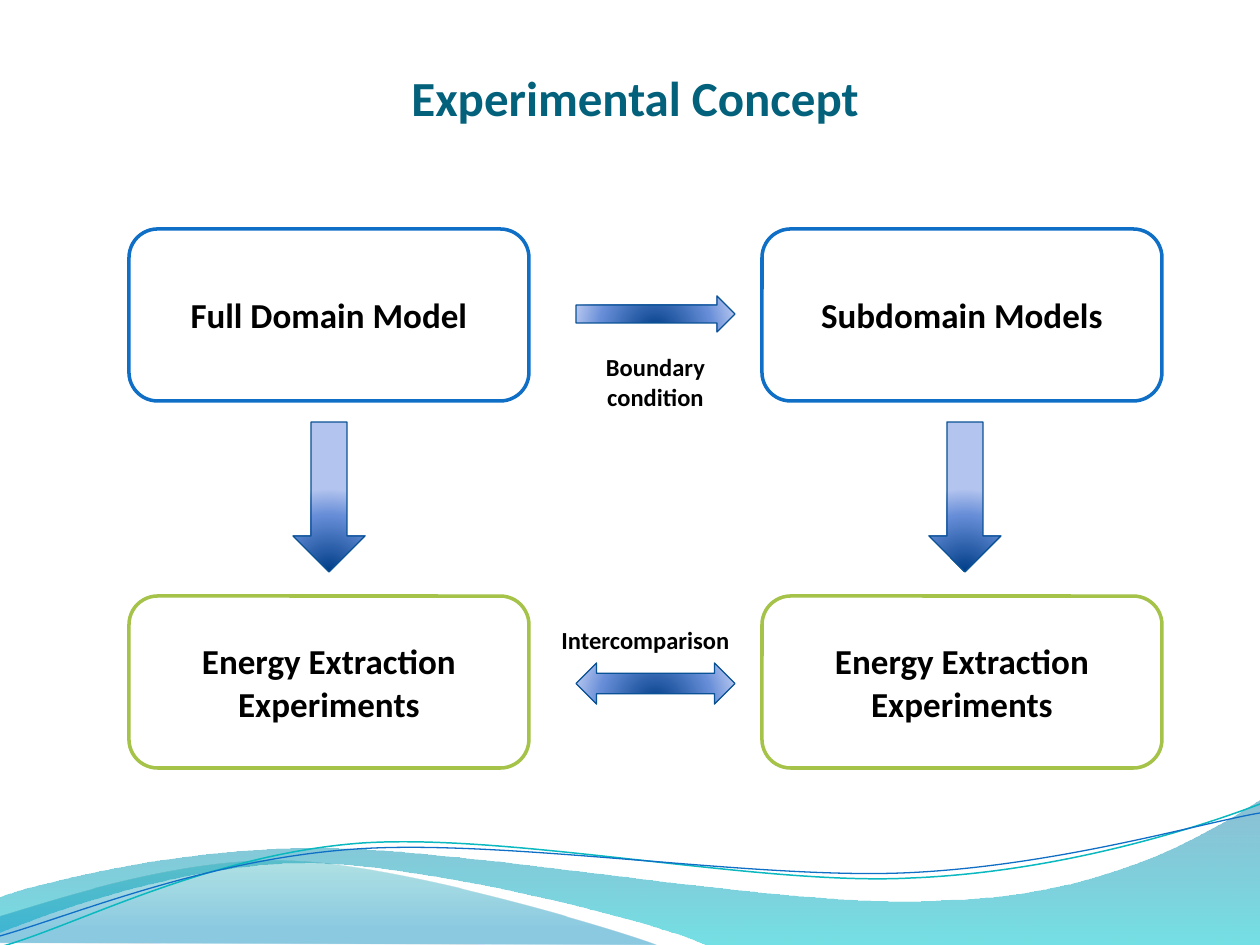
from lxml.etree import SubElement
from pptx import Presentation
from pptx.dml.color import RGBColor
from pptx.enum.shapes import MSO_SHAPE
from pptx.enum.text import MSO_ANCHOR, PP_ALIGN
from pptx.oxml.ns import qn
from pptx.util import Pt

SCALE = 914400 / 126
COLORS = {
    "title": "04617B", "ink": "000000", "paper": "FFFFFF",
    "blue": "0F6FC6", "green": "A5C249", "teal": "0AB8BF", "edge": "095295",
    "navy": "003D87", "mid": "668DD7", "pale": "B3C4EF",
    "deep": "0074A1", "aqua": "00C6CF", "sea": "00A1A9", "sky": "008BBF",
}
GLOW = [(0, "navy", 100), (68, "mid", 100), (100, "pale", 100)]
BANDS = [
    ([(1260, 144), (706, 144), (660, 122, 423, 63, 305, 63),
      (185, 63, 53, 111, 0, 132), (-1, 97), (21, 88, 164, 48, 320, 48),
      (476, 48, 779, 107, 936, 100), (1097, 98, 1202, 38, 1261, 0)],
     [(0, "deep", 45), (100, "aqua", 55)]),
    ([(656, 144), (617, 129, 401, 64, 291, 61),
      (181, 56, 48, 102, 0, 116), (0, 142)],
     [(0, "sea", 30), (80, "sky", 45)]),
]
CURVES = [
    ([(1260, 4), (1200, 27, 1061, 72, 911, 78),
      (761, 86, 513, 33, 362, 43), (210, 54, 77, 125, 3, 146)], "teal", 0.85),
    ([(1260, 13), (1201, 23, 1053, 67, 903, 73),
      (752, 79, 506, 39, 357, 49), (207, 59, 74, 115, 0, 136)], "blue", 0.75),
]


def px(*vals):
    """Turn pixel lengths into EMU."""
    return [round(v * SCALE) for v in vals]


def rgb(name):
    """Look up a colour by name."""
    return RGBColor.from_string(COLORS[name])


def put(shape, text, size=20, color="ink", anchor=MSO_ANCHOR.MIDDLE):
    """Set centred bold text in a shape."""
    frame = shape.text_frame
    frame.word_wrap = True
    frame.vertical_anchor = anchor
    para = frame.paragraphs[0]
    para.alignment = PP_ALIGN.CENTER
    run = para.add_run()
    run.text = text
    font = run.font
    font.name, font.size, font.bold = "Calibri", Pt(size), True
    font.color.rgb = rgb(color)


def label(slide, box, text, **fmt):
    """Add a text box."""
    put(slide.shapes.add_textbox(*px(*box)), text, **fmt)


def blend(shape, stops, radial=False):
    """Fill a shape with a linear or radial gradient."""
    shape.fill.gradient()
    grad = shape.element.spPr.find(qn("a:gradFill"))
    for child in list(grad):
        grad.remove(child)
    group = SubElement(grad, qn("a:gsLst"))
    for pos, name, alpha in stops:
        stop = SubElement(group, qn("a:gs"), pos=str(pos * 1000))
        color = SubElement(stop, qn("a:srgbClr"), val=COLORS[name])
        if alpha < 100:
            SubElement(color, qn("a:alpha"), val=str(alpha * 1000))
    if radial:
        ring = SubElement(grad, qn("a:path"), path="circle")
        SubElement(ring, qn("a:fillToRect"), l="50000", t="130000",
                   r="50000", b="-30000")
    else:
        SubElement(grad, qn("a:lin"), ang="5400000", scaled="0")


def stroke(shape, color, width):
    """Outline a shape and drop its shadow."""
    shape.shadow.inherit = False
    shape.line.color.rgb = rgb(color)
    shape.line.width = Pt(width)


def card(slide, box, text, color):
    """Add a rounded box with a coloured outline."""
    shape = slide.shapes.add_shape(MSO_SHAPE.ROUNDED_RECTANGLE, *px(*box))
    shape.fill.solid()
    shape.fill.fore_color.rgb = rgb("paper")
    stroke(shape, color, 2)
    put(shape, text)


def arrow(slide, kind, box):
    """Add a shaded block arrow."""
    shape = slide.shapes.add_shape(kind, *px(*box))
    blend(shape, GLOW, radial=True)
    stroke(shape, "edge", 0.75)


def sweep(slide, route, left, top, close):
    """Add a freeform of lines and cubic curves."""
    spots = [px(left + seg[i], top + seg[i + 1])
             for seg in route for i in range(0, len(seg), 2)]
    pen = slide.shapes.build_freeform(*spots[0])
    pen.add_line_segments(spots[1:], close=close)
    shape = pen.convert_to_shape()
    shape.shadow.inherit = False
    legs = iter(list(shape.element.iter(qn("a:lnTo"))))
    for seg in route[1:]:
        first = next(legs)
        if len(seg) == 6:
            bend = first.getparent()
            curve = SubElement(bend, qn("a:cubicBezTo"))
            bend.replace(first, curve)
            for leg in (first, next(legs), next(legs)):
                curve.append(leg[0])
                if leg is not first:
                    bend.remove(leg)
    return shape


def waves(slide, left, top):
    """Draw the bands and curves along the foot."""
    for route, stops in BANDS:
        shape = sweep(slide, route, left, top, True)
        blend(shape, stops)
        shape.line.fill.background()
    for route, color, width in CURVES:
        shape = sweep(slide, route, left, top, False)
        shape.fill.background()
        stroke(shape, color, width)


def column(slide, left, top, width, model, inset):
    """Draw a model, a down arrow and its experiments."""
    card(slide, (left, top, width, 172), model, "blue")
    arrow(slide, MSO_SHAPE.DOWN_ARROW, (left + inset, top + 193, 72, 150))
    card(slide, (left, top + 367, width, 172),
         "Energy Extraction Experiments", "green")


def links(slide, left, top, width):
    """Draw the labelled arrows between the columns."""
    inner, span = left + 47, 159
    side = {"size": 14, "anchor": MSO_ANCHOR.TOP}
    arrow(slide, MSO_SHAPE.RIGHT_ARROW, (inner, top + 67, span, 36))
    arrow(slide, MSO_SHAPE.LEFT_RIGHT_ARROW, (inner, top + 434, span, 41))
    label(slide, (inner, top + 117, span, 72), "Boundary condition", **side)
    label(slide, (left, top + 390, width, 43), "Intercomparison", **side)


def main():
    """Build and save the slide."""
    deck = Presentation()
    deck.slide_width, deck.slide_height = px(1260, 945)
    slide = deck.slides.add_slide(deck.slide_layouts[6])
    waves(slide, 0, 800)
    column(slide, 129, 229, 400, "Full Domain Model", 164)
    column(slide, 762, 229, 400, "Subdomain Models", 167)
    links(slide, 529, 229, 233)
    label(slide, (63, 66, 1144, 62), "Experimental Concept",
          size=28, color="title")
    deck.save("out.pptx")


if __name__ == "__main__":
    main()
